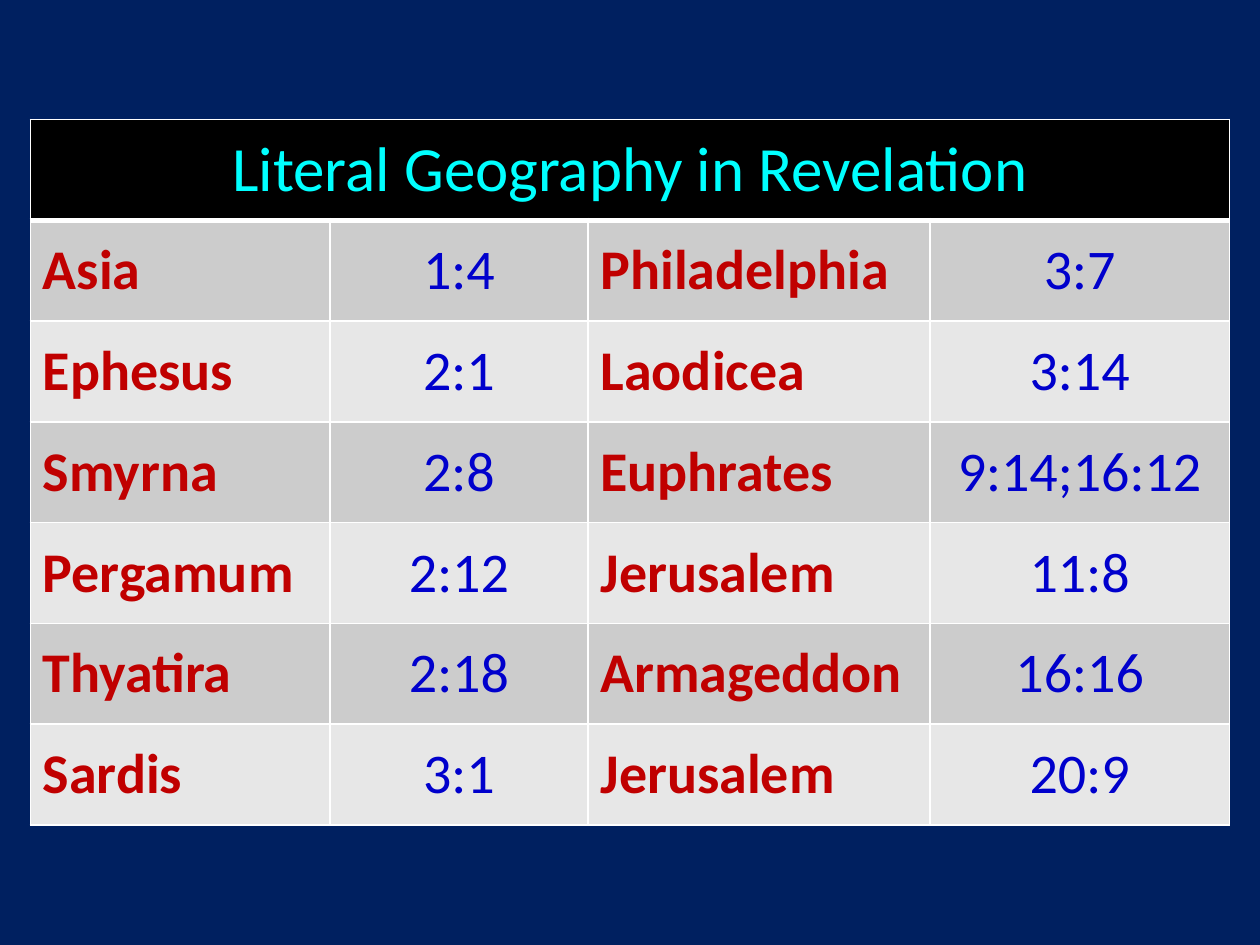
from lxml.etree import SubElement
from pptx import Presentation
from pptx.dml.color import RGBColor
from pptx.enum.text import MSO_ANCHOR as Anchor, PP_ALIGN as Align
from pptx.oxml.ns import qn
from pptx.util import Cm, Pt

TITLE = "Literal Geography in Revelation"
PLACES = [
    ("Asia", "1:4", "Philadelphia", "3:7"),
    ("Ephesus", "2:1", "Laodicea", "3:14"),
    ("Smyrna", "2:8", "Euphrates", "9:14;16:12"),
    ("Pergamum", "2:12", "Jerusalem", "11:8"),
    ("Thyatira", "2:18", "Armageddon", "16:16"),
    ("Sardis", "3:1", "Jerusalem", "20:9"),
]
COLUMN_SHARES = (0.25, 0.215, 0.285, 0.25)
BANDS = ("CCCCCC", "E7E7E7")
NAVY, BLACK, WHITE = "002060", "000000", "FFFFFF"
TITLE_FORMAT = {"size": Pt(36), "bold": False, "name": "Calibri"}
PLACE_FORMAT = {"size": Pt(32), "bold": True, "name": "Calibri"}
VERSE_FORMAT = {"size": Pt(32), "bold": False, "name": "Calibri"}


def paint(fill, color):
    fill.solid()
    fill.fore_color.rgb = RGBColor.from_string(color)


def add_borders(cell, **widths):
    properties = cell._tc.get_or_add_tcPr()
    for side in "LRTB":
        width = Pt(widths.get(side, 1))
        line = SubElement(properties, qn(f"a:ln{side}"), w=str(width))
        solid = SubElement(line, qn("a:solidFill"))
        SubElement(solid, qn("a:srgbClr"), val=WHITE)


def fill_cell(cell, text, background, color, align, font_format):
    paint(cell.fill, background)
    cell.vertical_anchor = Anchor.MIDDLE
    paragraph = cell.text_frame.paragraphs[0]
    paragraph.alignment = align
    run = paragraph.add_run()
    run.text = text
    for key, value in font_format.items():
        setattr(run.font, key, value)
    run.font.color.rgb = RGBColor.from_string(color)


def add_geography(slide, left, top, width, height):
    row_count = len(PLACES) + 1
    geography = slide.shapes.add_table(
        row_count, len(COLUMN_SHARES), left, top, width, height).table
    for column, share in zip(geography.columns, COLUMN_SHARES):
        column.width = int(width * share)
    for row in geography.rows:
        row.height = int(height / row_count)

    heading = geography.cell(0, 0)
    heading.merge(geography.cell(0, len(COLUMN_SHARES) - 1))
    for cell in geography.rows[0].cells:
        add_borders(cell, B=3)
    fill_cell(heading, TITLE, BLACK, "00FFFF", Align.CENTER, TITLE_FORMAT)

    for r, entries in enumerate(PLACES, start=1):
        for c, entry in enumerate(entries):
            cell = geography.cell(r, c)
            add_borders(cell, T=3 if r == 1 else 1)
            style = (("C00000", Align.LEFT, PLACE_FORMAT) if c % 2 == 0
                     else ("0000CC", Align.CENTER, VERSE_FORMAT))
            fill_cell(cell, entry, BANDS[(r - 1) % 2], *style)


def main():
    deck = Presentation()
    deck.slide_width, deck.slide_height = Cm(25.4), Cm(19.05)
    slide = deck.slides.add_slide(deck.slide_layouts[6])
    paint(slide.background.fill, NAVY)
    add_geography(slide, Cm(0.61), Cm(2.41), Cm(24.18), Cm(14.22))
    deck.save("out.pptx")


if __name__ == "__main__":
    main()
